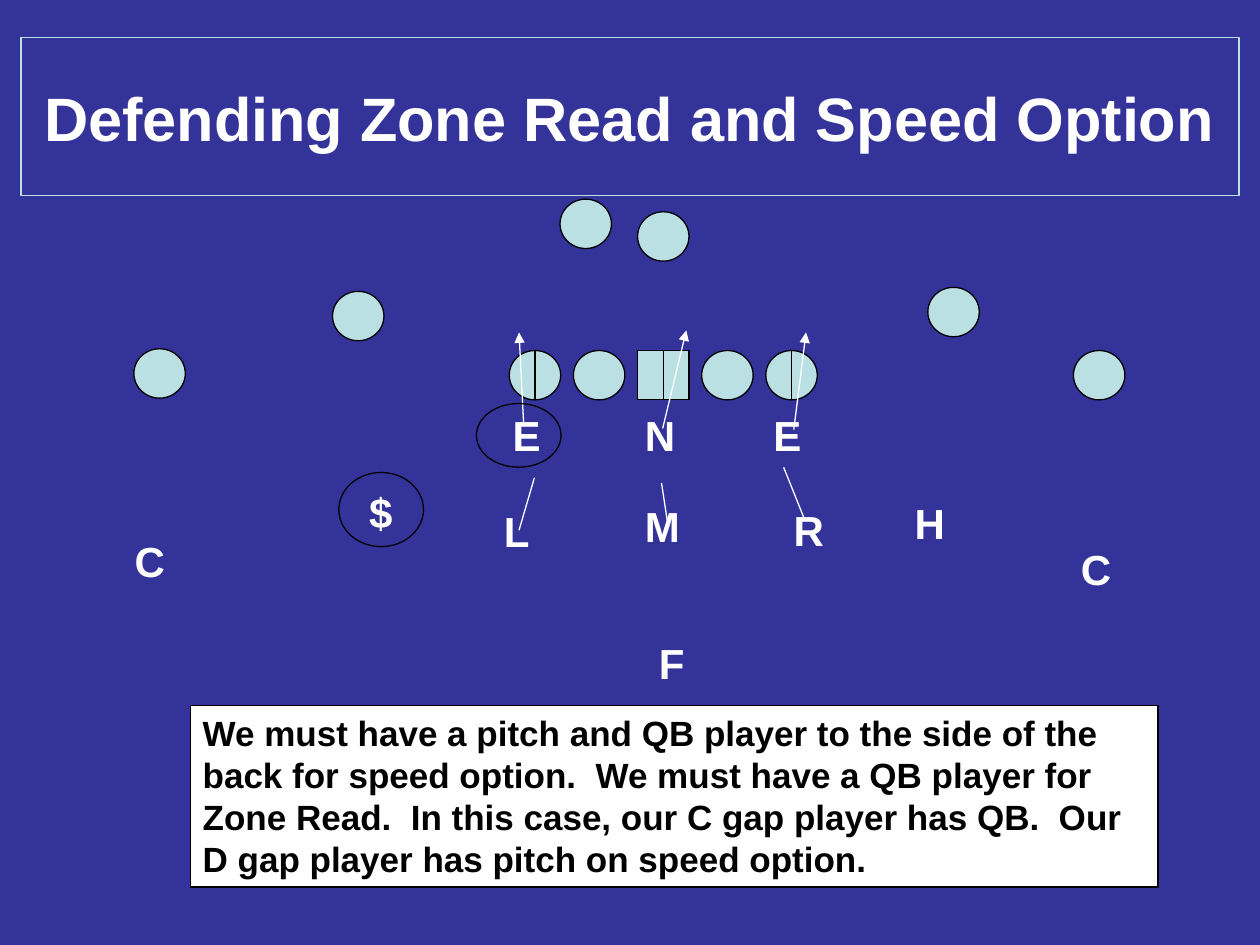
from dataclasses import dataclass

import lxml.etree
import pptx
import pptx.dml.color
import pptx.enum.shapes
import pptx.enum.text
import pptx.oxml.ns
import pptx.util

Pt = pptx.util.Pt
RGB = pptx.dml.color.RGBColor.from_string
SHAPE = pptx.enum.shapes.MSO_SHAPE
ALIGN = pptx.enum.text.PP_ALIGN
ANCHOR = pptx.enum.text.MSO_ANCHOR
qn = pptx.oxml.ns.qn


@dataclass(frozen=True)
class Theme:
    field: str = "333399"
    offense: str = "BBE0E3"
    white: str = "FFFFFF"
    black: str = "000000"
    font: str = "Arial"
    title: float = 35
    letter: float = 24
    note: float = 20
    stroke: float = 0.75


theme = Theme()
prs = pptx.Presentation()
prs.slide_width, prs.slide_height = Pt(720), Pt(540)
s = prs.slides.add_slide(prs.slide_layouts[6])
s.background.fill.solid()
s.background.fill.fore_color.rgb = RGB(theme.field)


def add_text(text, *, box, size, color=theme.white, fill=None, line=None,
             align=ALIGN.LEFT, anchor=ANCHOR.TOP, shape=SHAPE.RECTANGLE):
    box = [Pt(v) for v in box]
    if fill or line:
        sp = s.shapes.add_shape(shape, *box)
        sp.shadow.inherit = False
    else:
        sp = s.shapes.add_textbox(*box)
    if fill:
        sp.fill.solid()
        sp.fill.fore_color.rgb = RGB(fill)
    else:
        sp.fill.background()
    if line:
        sp.line.color.rgb = RGB(line)
        sp.line.width = Pt(theme.stroke)
    if text:
        tf = sp.text_frame
        tf.word_wrap = True
        tf.vertical_anchor = anchor
        p = tf.paragraphs[0]
        p.alignment = align
        r = p.add_run()
        r.text = text
        r.font.name, r.font.size, r.font.bold = theme.font, Pt(size), True
        r.font.color.rgb = RGB(color)


def add_line(x1, y1, x2, y2, color, arrow=False):
    kind = pptx.enum.shapes.MSO_CONNECTOR.STRAIGHT
    c = s.shapes.add_connector(kind, Pt(x1), Pt(y1), Pt(x2), Pt(y2))
    c.line.color.rgb = RGB(color)
    c.line.width = Pt(theme.stroke)
    if arrow:
        lxml.etree.SubElement(c.line._get_or_add_ln(), qn("a:tailEnd"), type="triangle")
    lxml.etree.SubElement(c._element.spPr, qn("a:effectLst"))


add_text("Defending Zone Read and Speed Option", box=(12, 21.6, 696, 90), size=theme.title,
         fill=theme.field, line=theme.offense, align=ALIGN.CENTER, anchor=ANCHOR.MIDDLE)

player_w, player_h = 29.4, 28.2
line_top, line_step = 200.3, 36.65
linemen = [(291 + i * line_step, line_top) for i in range(5)]
center = linemen[2]
backs = [(190, 166.5), (320, 113.8), (530.2, 164.2), (364.3, 121), (76.5, 199.3), (613.4, line_top)]
for x, y in linemen + backs:
    add_text("", box=(x, y, player_w, player_h), size=theme.letter, fill=theme.offense,
             line=theme.black, shape=SHAPE.RECTANGLE if (x, y) == center else SHAPE.OVAL)

for x, y in linemen[::2]:
    mid = x + player_w / 2
    add_line(mid, y + player_h, mid, y, theme.black)

defenders = [
    ("E", 285.8, 230.4), ("N", 361.4, 230.4), ("E", 434.9, 230.4),
    ("L", 280.8, 285.1), ("M", 361.4, 282.6), ("R", 446.4, 284.8),
    ("$", 203.8, 274.3), ("H", 515.5, 280.8),
    ("C", 69.8, 302.4), ("C", 610.6, 307), ("F", 369.4, 360.7),
]
for letter, x, y in defenders:
    add_text(letter, box=(x, y, 36.7, 36), size=theme.letter)

rushes = [(299.3, 243.4, 296.6, 190), (378.7, 244.8, 392.2, 188.8), (453.6, 245.5, 460.6, 190)]
for ends in rushes:
    add_line(*ends, theme.white, arrow=True)

fits = [(296.6, 303, 305.4, 273), (381.4, 298, 378, 276), (460, 297.4, 447.8, 267)]
for ends in fits:
    add_line(*ends, theme.white)

add_text("We must have a pitch and QB player to the side of the back for speed option.  "
         "We must have a QB player for Zone Read.  In this case, our C gap player has QB.  "
         "Our D gap player has pitch on speed option.",
         box=(108.7, 403.2, 553, 103.7), size=theme.note, color=theme.black,
         fill=theme.white, line=theme.black)

for box in [(272.2, 230.6, 48.4, 36.4), (193.6, 270, 48.4, 42.4)]:
    add_text("", box=box, size=theme.letter, line=theme.black, shape=SHAPE.OVAL)

prs.save("out.pptx")
